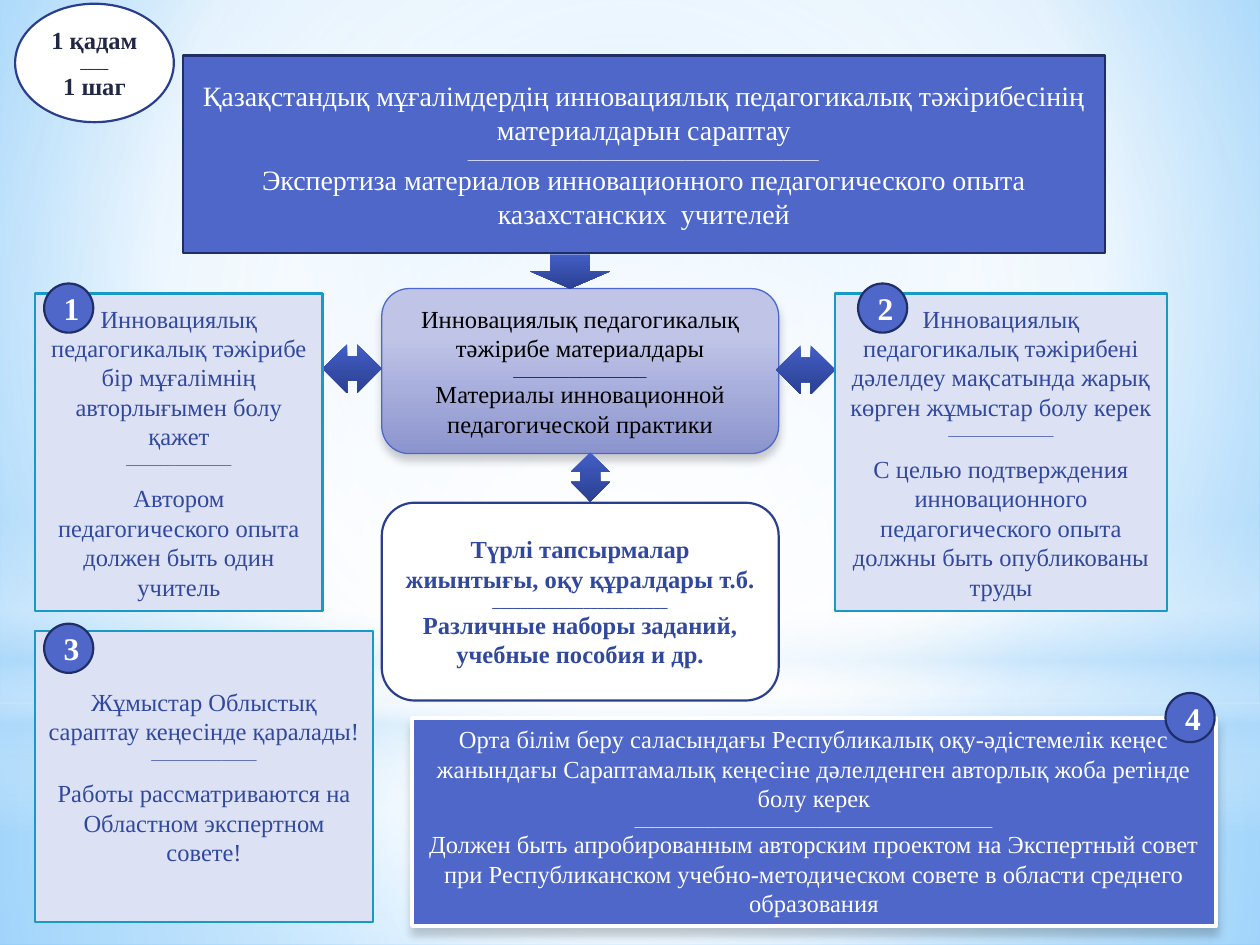
from lxml import etree
from pptx import Presentation
from pptx import util as u
from pptx.dml.color import RGBColor
from pptx.enum import shapes, text
from pptx.oxml import ns

FONT = "Times New Roman"
BLUE, NAVY, DEEP, INK = "4E67C8", "1F2E69", "2A3E8E", "31489F"
PALE, CYAN, WHITE = "DCE1F4", "1999C6", "FFFFFF"
KIND = shapes.MSO_SHAPE


def set_gradient(properties, stops, focus=None):
    """Swap the solid fill for stops (position, colour, opacity in percent)."""
    fill = etree.Element(ns.qn("a:gradFill"), rotWithShape="1")
    stop_list = etree.SubElement(fill, ns.qn("a:gsLst"))
    for position, color, opacity in stops:
        stop = etree.SubElement(stop_list, ns.qn("a:gs"), pos=str(position * 1000))
        rgb = etree.SubElement(stop, ns.qn("a:srgbClr"), val=color)
        if opacity < 100:
            etree.SubElement(rgb, ns.qn("a:alpha"), val=str(opacity * 1000))
    if focus:
        circle = etree.SubElement(fill, ns.qn("a:path"), path="circle")
        sides = {side: str(value * 1000) for side, value in zip("ltrb", focus)}
        etree.SubElement(circle, ns.qn("a:fillToRect"), **sides)
    else:
        etree.SubElement(fill, ns.qn("a:lin"), ang="5400000", scaled="0")
    solid = properties.find(ns.qn("a:solidFill"))
    properties.replace(solid, fill)


def add_shape(kind, box, fill, line=None, width=1.25, lines=(), size=14,
              color=WHITE, bold=False, gap=0, shadow=False):
    """Add a shape; lines made of underscores are small dividers."""
    shape = slide.shapes.add_shape(kind, *(u.Inches(value) for value in box))
    shape.shadow.inherit = False
    shape.fill.solid()
    if isinstance(fill, str):
        shape.fill.fore_color.rgb = RGBColor.from_string(fill)
    else:
        set_gradient(shape._element.spPr, **fill)
    if line:
        shape.line.color.rgb = RGBColor.from_string(line)
        shape.line.width = u.Pt(width)
    else:
        shape.line.fill.background()
    if shadow:
        effects = shape._element.spPr.find(ns.qn("a:effectLst"))
        outer = etree.SubElement(effects, ns.qn("a:outerShdw"), blurRad=str(u.Pt(5)),
                                 dist=str(u.Pt(4)), dir="5400000", rotWithShape="0")
        rgb = etree.SubElement(outer, ns.qn("a:srgbClr"), val="000000")
        etree.SubElement(rgb, ns.qn("a:alpha"), val="20000")
    frame = shape.text_frame
    frame.word_wrap = True
    frame.vertical_anchor = text.MSO_ANCHOR.MIDDLE
    for index, line_text in enumerate(lines):
        paragraph = frame.paragraphs[0] if index == 0 else frame.add_paragraph()
        paragraph.text = line_text
        paragraph.alignment = text.PP_ALIGN.CENTER
        paragraph.font.name = FONT
        paragraph.font.size = u.Pt(8 if line_text.startswith("_") else size)
        paragraph.font.bold = bold
        paragraph.font.color.rgb = RGBColor.from_string(color)
        if index == 2 and gap:
            paragraph.space_before = u.Pt(gap)
    return shape


presentation = Presentation()
presentation.slide_width = u.Inches(10)
presentation.slide_height = u.Inches(7.5)
slide = presentation.slides.add_slide(presentation.slide_layouts[6])

# Background: sky gradient with soft overlays
slide.background.fill.solid()
set_gradient(slide.element.cSld.bg.bgPr,
             [(0, "9ED5FF", 100), (60, WHITE, 100), (100, "5BB9FF", 100)],
             (20, 10, 20, 60))
center = (50, 50, 50, 50)
overlays = [
    (KIND.RECTANGLE, (0, 5.58, 10, 1.92), center,
     [(0, WHITE, 91), (37, WHITE, 76), (100, "B4DCFA", 79)]),
    (KIND.RECTANGLE, (0, 0, 10, 5.58), center,
     [(0, WHITE, 89), (48, WHITE, 62), (100, "B4DCFA", 79)]),
    (KIND.RECTANGLE, (0, 4.12, 10, 2.5), None,
     [(0, WHITE, 0), (29, WHITE, 30), (45, "B4DCFA", 40),
      (55, WHITE, 26), (65, "B4DCFA", 60), (100, WHITE, 0)]),
    (KIND.OVAL, (0, 1.75, 10, 5.58), center, [(0, WHITE, 100), (56, WHITE, 0)]),
]
for kind, box, focus, stops in overlays:
    add_shape(kind, box, {"stops": stops, "focus": focus})

# Step label and title
add_shape(KIND.OVAL, (0.12, 0.03, 1.26, 0.94), WHITE, DEEP,
          lines=["1 қадам", "_" * 4, "1 шаг"], color="212745", bold=True)
add_shape(KIND.RECTANGLE, (1.45, 0.44, 7.32, 1.57), BLUE, NAVY, size=16, lines=[
    "Қазақстандық мұғалімдердің инновациялық педагогикалық тәжірибесінің "
    "материалдарын сараптау",
    "_" * 50,
    "Экспертиза материалов инновационного педагогического опыта "
    "казахстанских  учителей"])

# Central boxes
add_shape(KIND.ROUNDED_RECTANGLE, (3.03, 2.29, 3.15, 1.31),
          {"stops": [(28, "C0C5E8", 100), (100, "8C94CE", 100)]}, BLUE, 0.75,
          color="000000", shadow=True, lines=[
              "Инновациялық педагогикалық тәжірибе материалдары",
              "_" * 19,
              "Материалы инновационной педагогической практики"])
add_shape(KIND.ROUNDED_RECTANGLE, (3.03, 3.99, 3.15, 1.57), WHITE, DEEP,
          color=INK, bold=True, lines=[
              "Түрлі тапсырмалар жиынтығы, оқу құралдары т.б.",
              "_" * 25,
              "Различные наборы заданий, учебные пособия и др."])

# Arrows between the boxes
arrows = [
    (KIND.DOWN_ARROW, (4.21, 2.02, 0.63, 0.27)),
    (KIND.LEFT_RIGHT_ARROW, (2.56, 2.73, 0.47, 0.39)),
    (KIND.LEFT_RIGHT_ARROW, (6.16, 2.74, 0.47, 0.39)),
    (KIND.UP_DOWN_ARROW, (4.53, 3.59, 0.31, 0.39)),
]
for kind, box in arrows:
    add_shape(kind, box, {"stops": [(0, "435EC5", 100), (100, "2B4092", 100)]})

# Requirements 1 to 3
requirements = [
    ((0.28, 2.33, 2.28, 2.52),
     "Инновациялық педагогикалық тәжірибе бір мұғалімнің авторлығымен болу қажет",
     "Автором педагогического опыта должен быть один учитель"),
    ((6.63, 2.33, 2.63, 2.52),
     "Инновациялық педагогикалық тәжірибені дәлелдеу мақсатында жарық көрген "
     "жұмыстар болу керек",
     "С целью подтверждения инновационного педагогического опыта должны быть "
     "опубликованы труды"),
    ((0.28, 5.01, 2.68, 2.31),
     "Жұмыстар Облыстық сараптау кеңесінде қаралады!",
     "Работы рассматриваются на Областном экспертном совете!"),
]
for box, kazakh, russian in requirements:
    add_shape(KIND.RECTANGLE, box, PALE, CYAN, color=INK, gap=9.2,
              lines=[kazakh, "_" * 15, russian])

# Requirement 4
council = add_shape(KIND.RECTANGLE, (3.27, 5.7, 6.38, 1.65), BLUE, WHITE, 2,
                    shadow=True, lines=[
    "Орта білім беру саласындағы Республикалық оқу-әдістемелік кеңес "
    "жанындағы Сараптамалық кеңесіне дәлелденген авторлық жоба ретінде болу керек",
    "_" * 51,
    "Должен быть апробированным авторским проектом на Экспертный совет при "
    "Республиканском учебно-методическом совете в области среднего образования"])
council.text_frame.vertical_anchor = text.MSO_ANCHOR.TOP
council.text_frame.auto_size = text.MSO_AUTO_SIZE.SHAPE_TO_FIT_TEXT

# Number badges
badges = [(0.35, 2.25), (6.81, 2.25), (0.35, 4.95), (9.25, 5.5)]
for number, (left, top) in enumerate(badges, start=1):
    add_shape(KIND.OVAL, (left, top, 0.39, 0.39), BLUE, NAVY,
              lines=[str(number)], size=18, bold=True)

presentation.save("out.pptx")
